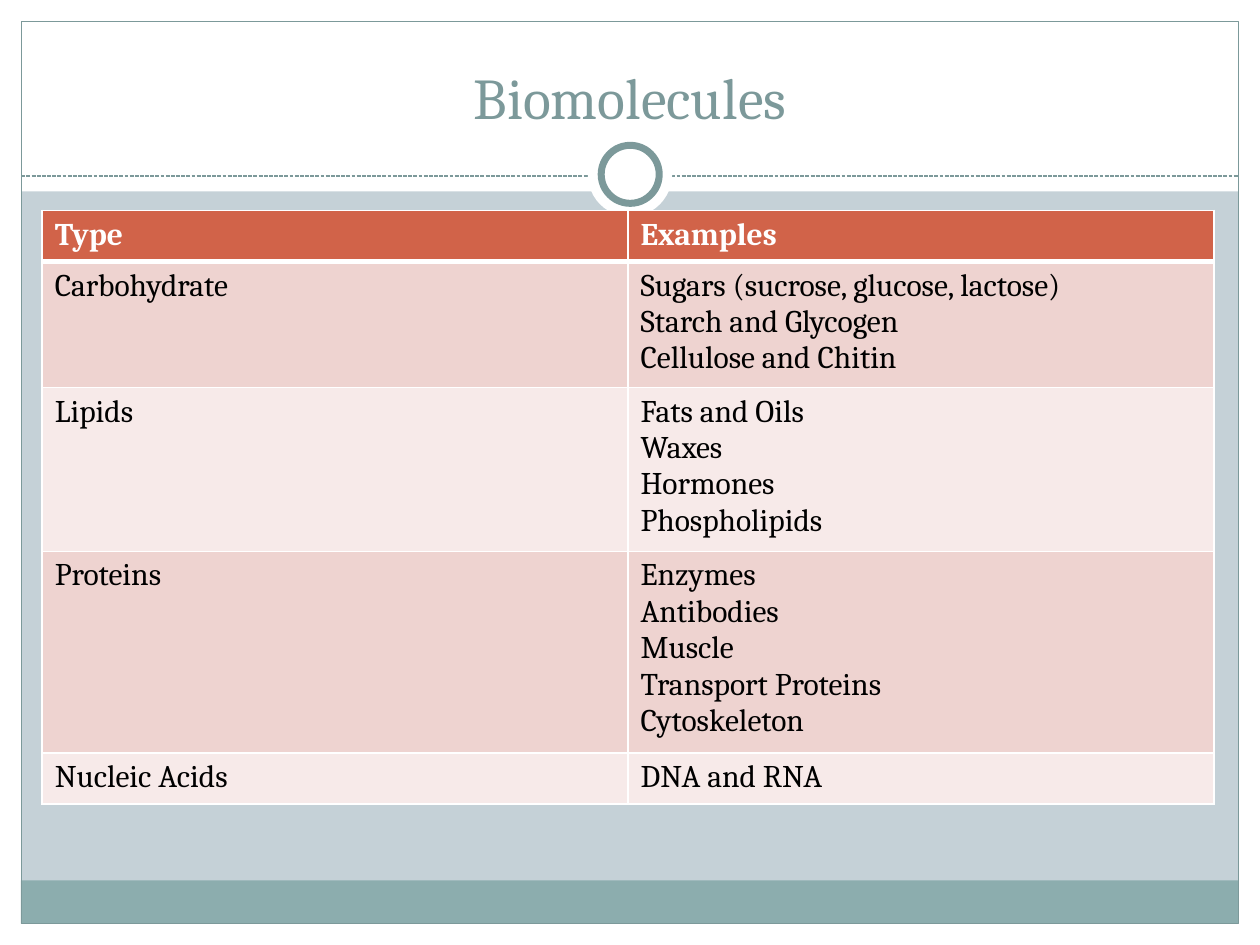
"""Build a slide with a table of biomolecule types and examples."""
from lxml.etree import SubElement
from pptx import Presentation
from pptx.dml.color import RGBColor
from pptx.enum.dml import MSO_LINE
from pptx.enum.shapes import MSO_CONNECTOR, MSO_SHAPE
from pptx.enum.text import MSO_ANCHOR, PP_ALIGN
from pptx.oxml.ns import qn
from pptx.util import Cm, Pt

COLORS = {
    "background": "C5D1D7", "white": "FFFFFF", "footer": "8CADAE", "accent": "7C999A",
    "header": "D16349", "odd": "EED3D0", "even": "F7EAE9", "black": "000000",
}
FONT = "Cambria"


def color(name):
    return RGBColor.from_string(COLORS[name])


def add_panel(slide, kind, bounds, fill=None, line_width=None):
    panel = slide.shapes.add_shape(kind, *map(Cm, bounds))
    panel.shadow.inherit = False
    if fill:
        panel.fill.solid()
        panel.fill.fore_color.rgb = color(fill)
    else:
        panel.fill.background()
    if line_width:
        panel.line.color.rgb = color("accent")
        panel.line.width = Pt(line_width)
    else:
        panel.line.fill.background()


deck = Presentation()
deck.slide_width, deck.slide_height = Cm(25.4), Cm(19.05)
slide = deck.slides.add_slide(deck.slide_layouts[6])
slide.background.fill.solid()
slide.background.fill.fore_color.rgb = color("background")

for bounds, fill in [
    ((0, 18.62, 25.4, 0.43), "white"),
    ((0, 0, 25.4, 3.86), "white"),
    ((0, 0, 0.43, 19.05), "white"),
    ((24.97, 0, 0.43, 19.05), "white"),
    ((0.42, 17.75, 24.54, 0.87), "footer"),
]:
    add_panel(slide, MSO_SHAPE.RECTANGLE, bounds, fill)
add_panel(slide, MSO_SHAPE.RECTANGLE, (0.43, 0.43, 24.54, 18.19), line_width=0.75)

divider = slide.shapes.add_connector(
    MSO_CONNECTOR.STRAIGHT, Cm(0.43), Cm(3.55), Cm(24.97), Cm(3.55))
divider.line.color.rgb = color("accent")
divider.line.width = Pt(0.75)
divider.line.dash_style = MSO_LINE.SQUARE_DOT
SubElement(divider.element.spPr, qn("a:effectLst"))

add_panel(slide, MSO_SHAPE.OVAL, (11.85, 2.67, 1.7, 1.7), "white")
add_panel(slide, MSO_SHAPE.OVAL, (12.12, 2.93, 1.17, 1.17), "white", 4)

title = slide.shapes.add_textbox(Cm(0.85), Cm(0.64), Cm(23.7), Cm(2.12))
title.text_frame.word_wrap = True
title.text_frame.vertical_anchor = MSO_ANCHOR.BOTTOM
title.text_frame.text = "Biomolecules"
para = title.text_frame.paragraphs[0]
para.alignment = PP_ALIGN.CENTER
para.font.name, para.font.size = FONT, Pt(33)
para.font.color.rgb = color("accent")

rows = [
    ("Type", ["Examples"]),
    ("Carbohydrate", ["Sugars (sucrose, glucose, lactose)", "Starch and Glycogen",
                      "Cellulose and Chitin"]),
    ("Lipids", ["Fats and Oils", "Waxes", "Hormones", "Phospholipids"]),
    ("Proteins", ["Enzymes", "Antibodies", "Muscle", "Transport Proteins", "Cytoskeleton"]),
    ("Nucleic Acids", ["DNA and RNA"]),
]
table = slide.shapes.add_table(
    len(rows), 2, Cm(0.85), Cm(4.24), Cm(23.62), Cm(1.03 * len(rows))).table
for row_index, (molecule, examples) in enumerate(rows):
    is_header = row_index == 0
    fill = "header" if is_header else ("odd" if row_index % 2 else "even")
    for column_index, text in enumerate([molecule, "\n".join(examples)]):
        cell = table.cell(row_index, column_index)
        cell.text_frame.text = text
        for para in cell.text_frame.paragraphs:
            for span in para.runs:
                span.font.name, span.font.size = FONT, Pt(18)
                span.font.bold = is_header
                span.font.color.rgb = color("white" if is_header else "black")
        properties = cell._tc.get_or_add_tcPr()
        for side in ("lnL", "lnR", "lnT", "lnB"):
            under_header = (row_index, side) in [(0, "lnB"), (1, "lnT")]
            border = SubElement(properties, qn(f"a:{side}"), w=str(Pt(3 if under_header else 1)))
            solid = SubElement(border, qn("a:solidFill"))
            SubElement(solid, qn("a:srgbClr"), val=COLORS["white"])
        cell.fill.solid()
        cell.fill.fore_color.rgb = color(fill)

deck.save("out.pptx")
